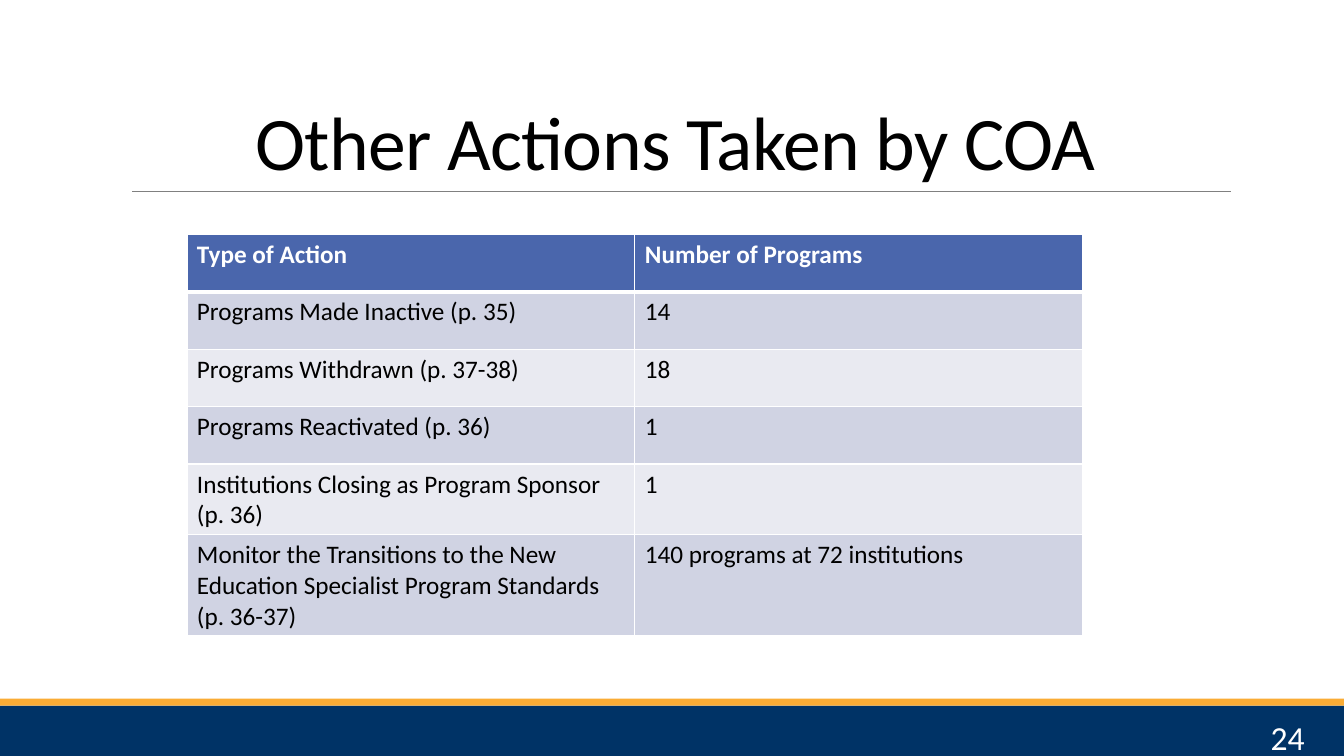
from lxml.etree import SubElement
from pptx import Presentation
from pptx.dml.color import RGBColor
from pptx.enum.shapes import MSO_CONNECTOR, MSO_SHAPE
from pptx.enum.text import MSO_ANCHOR, MSO_AUTO_SIZE, PP_ALIGN
from pptx.oxml.ns import qn
from pptx.util import Pt

WHITE = RGBColor(0xFF, 0xFF, 0xFF)
BLACK = RGBColor(0x00, 0x00, 0x00)
NAVY = RGBColor(0x00, 0x33, 0x66)
GOLD = RGBColor(0xFA, 0xAC, 0x35)
GREY = RGBColor(0x80, 0x80, 0x80)
HEADER_BLUE = RGBColor(0x4A, 0x66, 0xAC)
BAND_DARK = RGBColor(0xD0, 0xD3, 0xE3)
BAND_LIGHT = RGBColor(0xE9, 0xEA, 0xF1)
FONT = "Calibri"
SLIDE_WIDTH, SLIDE_HEIGHT = 960, 540

ACTIONS = [
    ("Type of Action", "Number of Programs"),
    ("Programs Made Inactive (p. 35)", "14"),
    ("Programs Withdrawn (p. 37-38)", "18"),
    ("Programs Reactivated (p. 36)", "1"),
    ("Institutions Closing as Program Sponsor (p. 36)", "1"),
    ("Monitor the Transitions to the New Education Specialist Program Standards (p. 36-37)",
     "140 programs at 72 institutions"),
]


def write(frame, text, size, color, align=PP_ALIGN.LEFT, bold=False):
    """Fill a text frame with one formatted paragraph and return its run."""
    frame.word_wrap = True
    frame.text = text
    para = frame.paragraphs[0]
    para.alignment = align
    span = para.runs[0]
    span.font.name = FONT
    span.font.size = Pt(size)
    span.font.bold = bold
    span.font.color.rgb = color
    return span


def add_band(page, left, top, width, height, color):
    """Draw a plain filled rectangle."""
    band = page.shapes.add_shape(
        MSO_SHAPE.RECTANGLE, Pt(left), Pt(top), Pt(width), Pt(height))
    band.shadow.inherit = False
    band.fill.solid()
    band.fill.fore_color.rgb = color
    band.line.fill.background()


def add_footer(page, left, top, width, height, number):
    """Draw the navy footer with its gold stripe and the page number."""
    stripe = 5
    add_band(page, left, top + stripe, width, height - stripe, NAVY)
    add_band(page, left, top, width, stripe, GOLD)
    box = page.shapes.add_textbox(
        Pt(left + width - 124), Pt(top + 9.5), Pt(103), Pt(29))
    write(box.text_frame, number, 24, WHITE, PP_ALIGN.RIGHT)


def add_title(page, left, top, width, height, text):
    """Place the title at the foot of its box, above a thin rule."""
    title = page.shapes.title
    title.left, title.top = Pt(left), Pt(top)
    title.width, title.height = Pt(width), Pt(height)
    frame = title.text_frame
    frame.auto_size = MSO_AUTO_SIZE.NONE
    frame.vertical_anchor = MSO_ANCHOR.BOTTOM
    span = write(frame, text, 54, BLACK, PP_ALIGN.CENTER)
    span.font._element.set("spc", "-50")
    frame.paragraphs[0].line_spacing = 0.85

    bottom = Pt(top + height)
    rule = page.shapes.add_connector(
        MSO_CONNECTOR.STRAIGHT, Pt(left + 8), bottom, Pt(left + width + 1), bottom)
    rule.line.color.rgb = GREY
    rule.line.width = Pt(0.5)
    SubElement(rule._element.spPr, qn("a:effectLst"))


def set_borders(cell, top, bottom):
    """Give a cell white borders, with top and bottom widths in points."""
    properties = cell._tc.get_or_add_tcPr()
    for side, width in (("L", 1), ("R", 1), ("T", top), ("B", bottom)):
        line = SubElement(properties, qn(f"a:ln{side}"), w=str(Pt(width)))
        fill = SubElement(line, qn("a:solidFill"))
        SubElement(fill, qn("a:srgbClr"), val=str(WHITE))


def add_actions_table(page, left, top, width, row_height, rows):
    """Add the banded table with a bold header row."""
    columns = len(rows[0])
    table = page.shapes.add_table(
        len(rows), columns, Pt(left), Pt(top), Pt(width),
        Pt(row_height * len(rows))).table
    for column in table.columns:
        column.width = Pt(width / columns)
    for index, texts in enumerate(rows):
        header = index == 0
        color = HEADER_BLUE if header else BAND_DARK if index % 2 else BAND_LIGHT
        for cell, text in zip(table.rows[index].cells, texts):
            set_borders(cell, 3 if index == 1 else 1, 3 if header else 1)
            cell.fill.solid()
            cell.fill.fore_color.rgb = color
            write(cell.text_frame, text, 18, WHITE if header else BLACK, bold=header)


def main():
    """Build the slide and save the deck."""
    deck = Presentation()
    deck.slide_width, deck.slide_height = Pt(SLIDE_WIDTH), Pt(SLIDE_HEIGHT)
    page = deck.slides.add_slide(deck.slide_layouts.get_by_name("Title Only"))
    add_footer(page, 0, 499, SLIDE_WIDTH, 41, "24")
    add_title(page, 86.5, 22.5, 792, 114, "Other Actions Taken by COA")
    add_actions_table(page, 133.5, 167.5, 640, 41, ACTIONS)
    deck.save("out.pptx")


if __name__ == "__main__":
    main()
